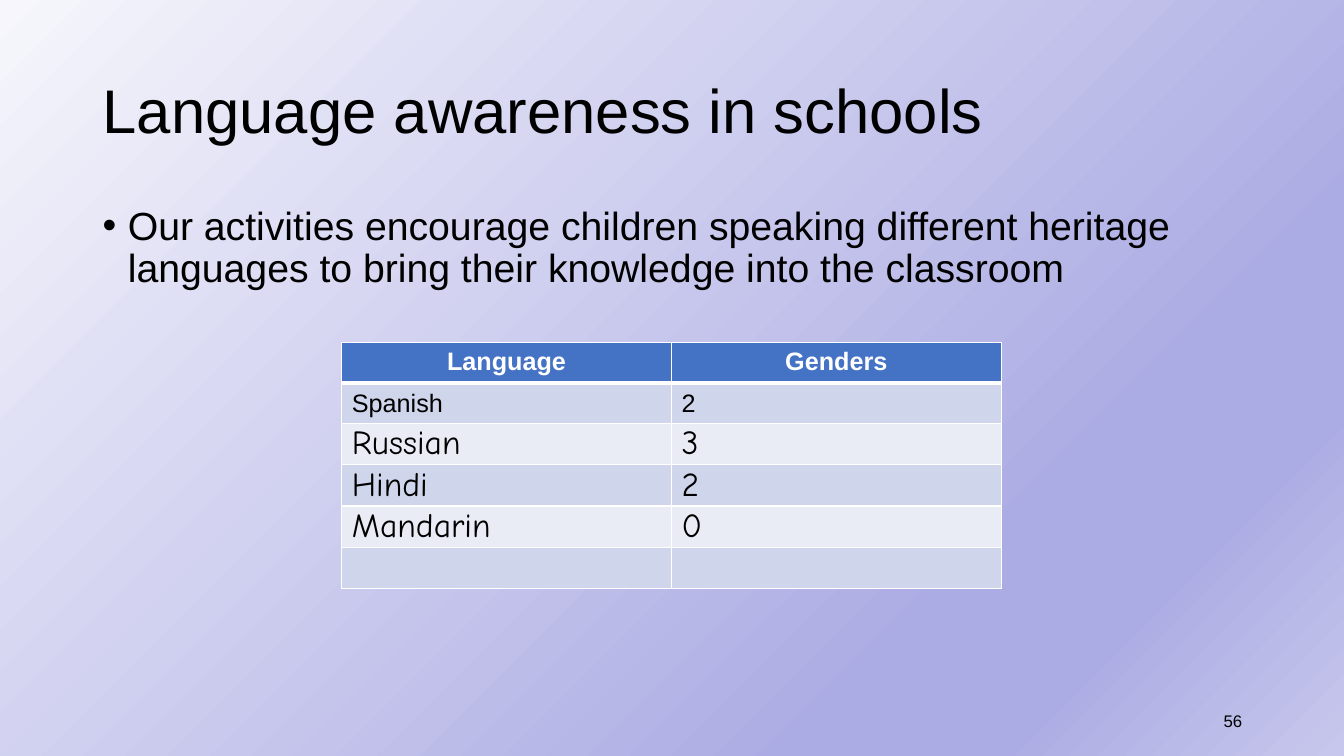
"""Build the slide on language awareness in schools."""
from lxml.etree import SubElement
from pptx import Presentation
from pptx.dml.color import RGBColor
from pptx.enum.text import MSO_ANCHOR, PP_ALIGN
from pptx.oxml.ns import qn
from pptx.util import Inches, Pt

TITLE = "Language awareness in schools"
MESSAGE = ("Our activities encourage children speaking different heritage "
           "languages to bring their knowledge into the classroom")
PAGE_NUMBER = "56"
LANGUAGES = [
    ("Language", "Genders"),
    ("Spanish", "2"),
    ("Russian", "3"),
    ("Hindi", "2"),
    ("Mandarin", "0"),
    ("", ""),
]
THEME = {
    "font": "Arial", "hand_font": "Comic Neue",
    "title": 44, "body": 28, "hand": 24, "table": 18, "page": 12,
    "text": "000000", "white": "FFFFFF", "header": "4472C4",
    "bands": ("CFD5EA", "E9EBF5"),
    "background": [(0, "F6F6FC"), (74, "ACACE4"), (83, "ACACE4"), (100, "C7C7ED")],
}
MARGIN, CONTENT_WIDTH = 0.92, 11.5
TABLE_LEFT, TABLE_TOP, COLUMN_WIDTH = 3.39, 3.4, 3.27
ROW_HEIGHTS = [0.38, 0.4] + [0.41] * 4


def apply(target, values):
    for name, value in values.items():
        setattr(target, name, value)


def write(paragraph, text, size, font=THEME["font"], color=THEME["text"], bold=False):
    paragraph.text = text
    apply(paragraph.font, {"size": Pt(size), "name": font, "bold": bold})
    paragraph.font.color.rgb = RGBColor.from_string(color)


def add_text(slide, box, text, size, anchor=MSO_ANCHOR.MIDDLE, **paragraph_format):
    frame = slide.shapes.add_textbox(*map(Inches, box)).text_frame
    apply(frame, {"word_wrap": True, "vertical_anchor": anchor})
    paragraph = frame.paragraphs[0]
    apply(paragraph, paragraph_format)
    return paragraph, write(paragraph, text, size)


def paint_background(slide):
    fill = slide.background.fill
    fill.gradient()
    fill.gradient_angle = 315
    stops = next(slide.element.iter(qn("a:gsLst")))
    for stop in list(stops):
        stops.remove(stop)
    for position, color in THEME["background"]:
        stop = SubElement(stops, qn("a:gs"), pos=str(position * 1000))
        SubElement(stop, qn("a:srgbClr"), val=color)


def add_bullet(paragraph):
    properties = paragraph._p.get_or_add_pPr()
    indent = Inches(0.25)
    properties.set("marL", str(indent))
    properties.set("indent", str(-indent))
    SubElement(properties, qn("a:buFont"), typeface="Arial")
    SubElement(properties, qn("a:buChar"), char="•")


def add_borders(cell, top, bottom):
    properties = cell._tc.get_or_add_tcPr()
    for side, width in (("L", 1), ("R", 1), ("T", top), ("B", bottom)):
        line = SubElement(properties, qn(f"a:ln{side}"), w=str(Pt(width)))
        fill = SubElement(line, qn("a:solidFill"))
        SubElement(fill, qn("a:srgbClr"), val=THEME["white"])


def style_cell(cell, text, row):
    header = row == 0
    add_borders(cell, 3 if row == 1 else 1, 3 if header else 1)
    cell.fill.solid()
    color = THEME["header"] if header else THEME["bands"][(row - 1) % 2]
    cell.fill.fore_color.rgb = RGBColor.from_string(color)
    paragraph = cell.text_frame.paragraphs[0]
    if header:
        paragraph.alignment = PP_ALIGN.CENTER
        write(paragraph, text, THEME["table"], color=THEME["white"], bold=True)
        return
    apply(cell, {"vertical_anchor": MSO_ANCHOR.MIDDLE, "margin_top": 0, "margin_bottom": 0})
    if row == 1:
        write(paragraph, text, THEME["table"])
    elif text:
        write(paragraph, text, THEME["hand"], THEME["hand_font"])


def add_language_table(slide):
    columns = len(LANGUAGES[0])
    table = slide.shapes.add_table(
        len(LANGUAGES), columns, Inches(TABLE_LEFT), Inches(TABLE_TOP),
        Inches(COLUMN_WIDTH * columns), Inches(sum(ROW_HEIGHTS))).table
    for row, (values, height) in enumerate(zip(LANGUAGES, ROW_HEIGHTS)):
        table.rows[row].height = Inches(height)
        for column, text in enumerate(values):
            style_cell(table.cell(row, column), text, row)


def main():
    presentation = Presentation()
    apply(presentation, {"slide_width": Inches(13.33), "slide_height": Inches(7.5)})
    slide = presentation.slides.add_slide(presentation.slide_layouts[6])
    paint_background(slide)
    add_text(slide, (MARGIN, 0.4, CONTENT_WIDTH, 1.45), TITLE, THEME["title"],
             line_spacing=0.9)
    message, _ = add_text(slide, (MARGIN, 2, CONTENT_WIDTH, 1.12), MESSAGE, THEME["body"],
                          MSO_ANCHOR.TOP, line_spacing=0.9)
    message_properties = message._p.get_or_add_pPr()
    for defaults in message_properties.findall(qn("a:defRPr")):
        message_properties.remove(defaults)
    add_bullet(message)
    write(message, MESSAGE, THEME["body"])
    add_text(slide, (9.42, 6.95, 3, 0.4), PAGE_NUMBER, THEME["page"],
             alignment=PP_ALIGN.RIGHT)
    add_language_table(slide)
    presentation.save("out.pptx")


if __name__ == "__main__":
    main()
